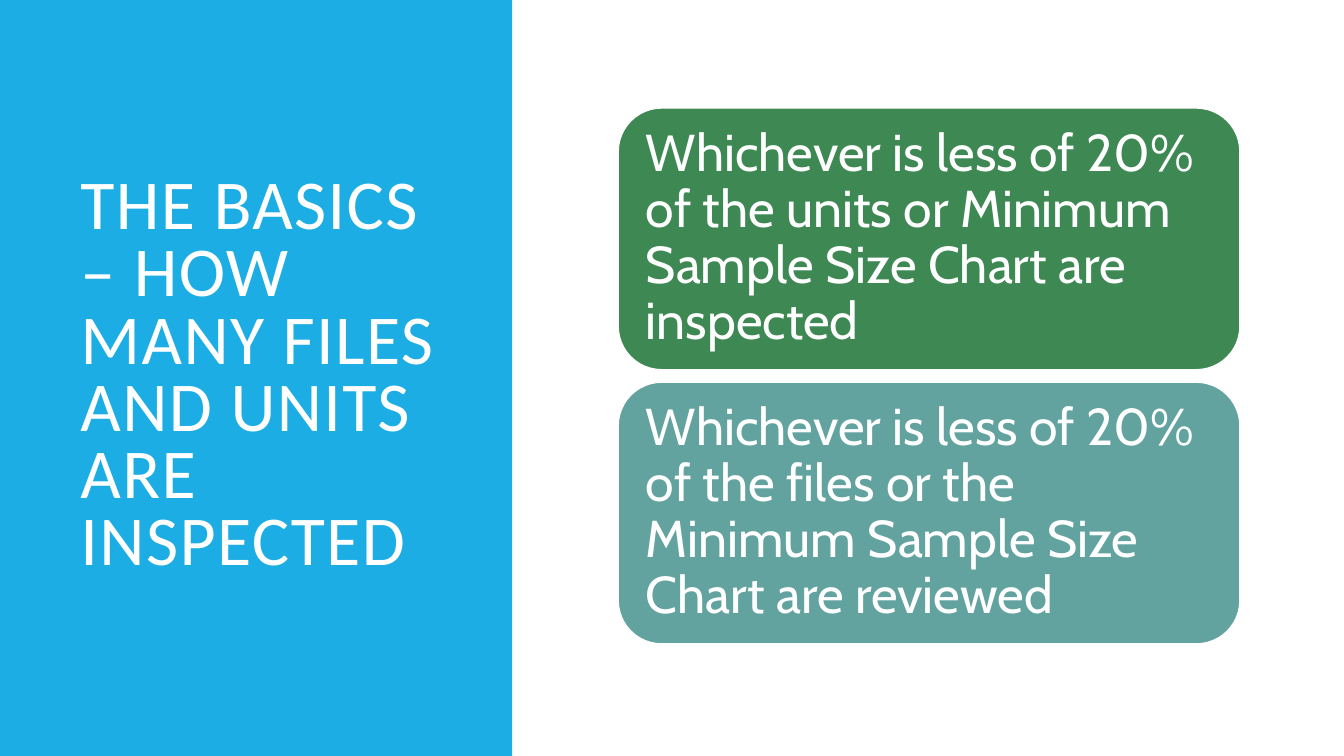
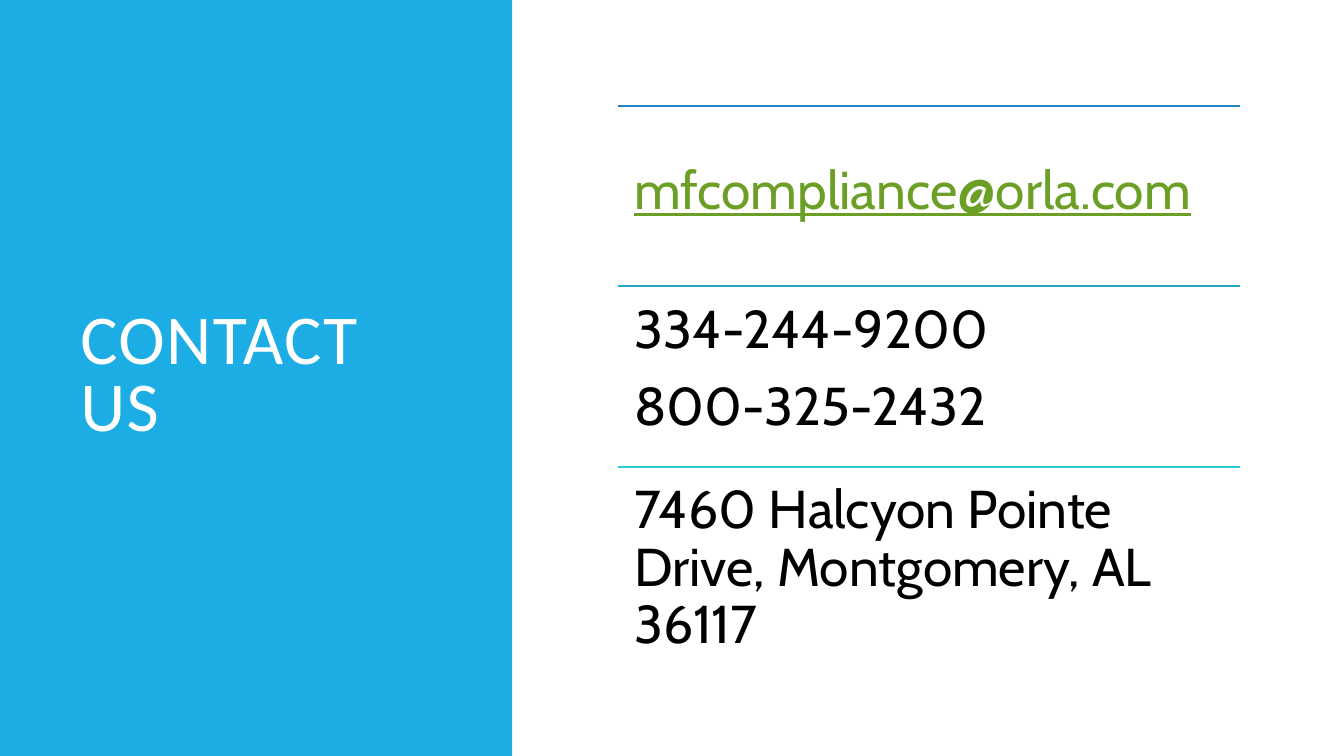
from dataclasses import dataclass

from lxml import etree
from pptx import Presentation
from pptx.dml.color import RGBColor
from pptx.enum.shapes import MSO_CONNECTOR, MSO_SHAPE
from pptx.enum.text import MSO_ANCHOR, PP_ALIGN
from pptx.oxml.ns import qn
from pptx.slide import Slide
from pptx.text.text import TextFrame
from pptx.util import Inches, Pt

RECTANGLE = MSO_SHAPE.RECTANGLE
ROUNDED = MSO_SHAPE.ROUNDED_RECTANGLE
STRAIGHT = MSO_CONNECTOR.STRAIGHT
TOP, MIDDLE = MSO_ANCHOR.TOP, MSO_ANCHOR.MIDDLE
LEFT = PP_ALIGN.LEFT

COLORS = {
    "band": "1CADE4",
    "white": "FFFFFF",
    "black": "000000",
    "units": "3E8853",
    "files": "62A39F",
    "email": "6B9F25",
    "email_rule": "2683C6",
    "phone_rule": "27A7CE",
    "address_rule": "27CED7",
}
TITLE_FONT, BODY_FONT = "Calibri", "Cabin"
SLIDE_WIDTH, SLIDE_HEIGHT = 13.33, 7.5
BAND_WIDTH = 5.08
CONTENT_LEFT, CONTENT_WIDTH = 6.13, 6.17
CARD_TOP, CARD_HEIGHT, CARD_GAP, CARD_INSET = 1.07, 2.6, 0.12, 0.28
ROW_TOP, ROW_HEIGHT, ROW_INSET = 1.05, 1.79, 0.16
LINE_WIDTH = 1.25


@dataclass(frozen=True)
class TextStyle:
    font: str
    size: float
    color: str
    line_spacing: float = 0.9
    space_after: float = 0
    tracking: float = 0
    underline: bool = False


@dataclass(frozen=True)
class Card:
    text: str
    color: str


@dataclass(frozen=True)
class ContactRow:
    text: str
    rule_color: str
    text_color: str = "black"
    underline: bool = False
    drop: float = 0


TITLE_STYLE = TextStyle(TITLE_FONT, 50, "white", line_spacing=0.8, tracking=1)
CARD_STYLE = TextStyle(BODY_FONT, 37, "white")

CARDS = (
    Card("Whichever is less of 20% of the units or Minimum Sample Size Chart are inspected", "units"),
    Card("Whichever is less of 20% of the files or the Minimum Sample Size Chart are reviewed", "files"),
)
CONTACT_ROWS = (
    ContactRow("mfcompliance@orla.com", "email_rule", "email", underline=True, drop=0.57),
    ContactRow("334-244-9200\n800-325-2432", "phone_rule"),
    ContactRow("7460 Halcyon Pointe Drive, Montgomery, AL 36117", "address_rule"),
)


def rgb(name: str) -> RGBColor:
    return RGBColor.from_string(COLORS[name])


def write_text(frame: TextFrame, text: str, style: TextStyle, anchor: MSO_ANCHOR,
               inset: float, drop: float = 0) -> None:
    frame.text = text
    frame.word_wrap = True
    frame.vertical_anchor = anchor
    frame.margin_left = frame.margin_right = frame.margin_bottom = Inches(inset)
    frame.margin_top = Inches(inset + drop)
    for paragraph in frame.paragraphs:
        paragraph.alignment = LEFT
        paragraph.line_spacing = style.line_spacing
        paragraph.space_after = Pt(style.space_after)
        for run in paragraph.runs:
            run.font.name = style.font
            run.font.size = Pt(style.size)
            run.font.color.rgb = rgb(style.color)
            run.font.underline = style.underline
            if style.tracking:
                run._r.get_or_add_rPr().set("spc", str(round(style.tracking * 100)))


def add_title_band(slide: Slide, title: str) -> None:
    band = slide.shapes.add_shape(RECTANGLE, 0, 0, Inches(BAND_WIDTH), Inches(SLIDE_HEIGHT))
    band.shadow.inherit = False
    band.fill.solid()
    band.fill.fore_color.rgb = rgb("band")
    band.line.fill.background()
    heading = slide.shapes.add_textbox(Inches(0.7), Inches(0.7), Inches(3.74), Inches(6.09))
    write_text(heading.text_frame, title, TITLE_STYLE, MIDDLE, 0.1)


def add_card(slide: Slide, card: Card, top: float) -> None:
    panel = slide.shapes.add_shape(ROUNDED, Inches(CONTENT_LEFT), Inches(top),
                                   Inches(CONTENT_WIDTH), Inches(CARD_HEIGHT))
    panel.shadow.inherit = False
    panel.fill.solid()
    panel.fill.fore_color.rgb = rgb(card.color)
    panel.line.color.rgb = rgb("white")
    panel.line.width = Pt(LINE_WIDTH)
    write_text(panel.text_frame, card.text, CARD_STYLE, MIDDLE, CARD_INSET - 0.13)


def add_contact_row(slide: Slide, row: ContactRow, top: float) -> None:
    rule = slide.shapes.add_connector(STRAIGHT, Inches(CONTENT_LEFT), Inches(top),
                                      Inches(CONTENT_LEFT + CONTENT_WIDTH), Inches(top))
    rule.line.color.rgb = rgb(row.rule_color)
    rule.line.width = Pt(LINE_WIDTH)
    etree.SubElement(rule._element.spPr, qn("a:effectLst"))
    detail = slide.shapes.add_textbox(Inches(CONTENT_LEFT), Inches(top),
                                      Inches(CONTENT_WIDTH), Inches(ROW_HEIGHT))
    style = TextStyle(BODY_FONT, 38, row.text_color, space_after=14, underline=row.underline)
    write_text(detail.text_frame, row.text, style, TOP, ROW_INSET, row.drop)


def main() -> None:
    deck = Presentation()
    deck.slide_width, deck.slide_height = Inches(SLIDE_WIDTH), Inches(SLIDE_HEIGHT)
    blank = deck.slide_layouts[6]

    basics = deck.slides.add_slide(blank)
    add_title_band(basics, "THE BASICS – HOW MANY FILES AND UNITS ARE INSPECTED")
    for index, card in enumerate(CARDS):
        add_card(basics, card, CARD_TOP + index * (CARD_HEIGHT + CARD_GAP))

    contact = deck.slides.add_slide(blank)
    add_title_band(contact, "CONTACT US")
    for index, row in enumerate(CONTACT_ROWS):
        add_contact_row(contact, row, ROW_TOP + index * ROW_HEIGHT)

    deck.save("out.pptx")


if __name__ == "__main__":
    main()
